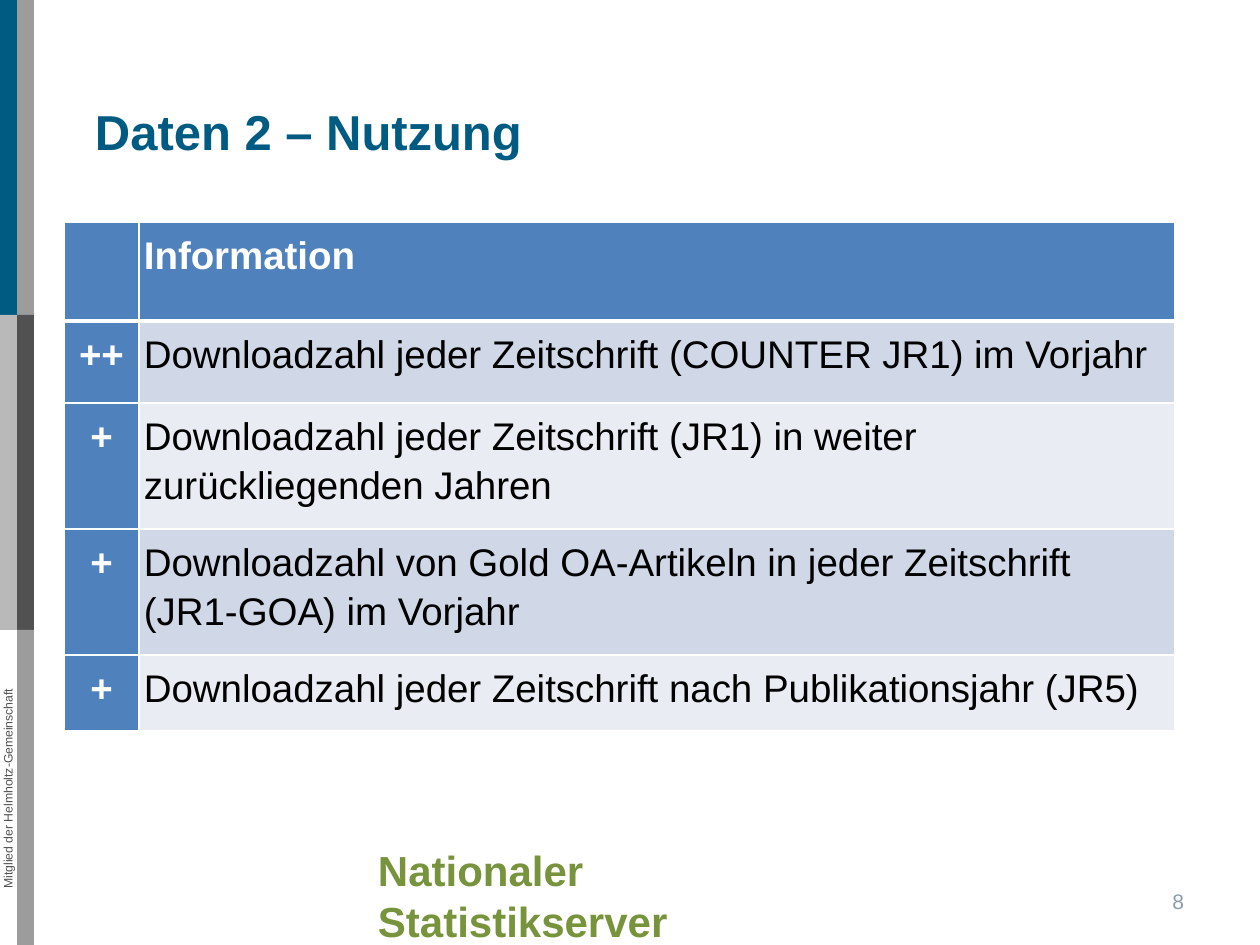
from dataclasses import dataclass

from lxml import etree
from pptx import Presentation
from pptx.dml.color import RGBColor
from pptx.enum.shapes import MSO_SHAPE
from pptx.enum.text import MSO_ANCHOR, PP_ALIGN
from pptx.oxml.ns import qn
from pptx.util import Inches, Pt

LEFT, CENTER, RIGHT = PP_ALIGN.LEFT, PP_ALIGN.CENTER, PP_ALIGN.RIGHT
TOP, MIDDLE = MSO_ANCHOR.TOP, MSO_ANCHOR.MIDDLE
RECT = MSO_SHAPE.RECTANGLE
PX_PER_INCH = 126


@dataclass(frozen=True)
class Theme:
    font: str = "Arial"
    blue: str = "005B82"
    light_gray: str = "B9B9B9"
    mid_gray: str = "9C9C9C"
    dark_gray: str = "515151"
    page_gray: str = "8B9BAC"
    green: str = "77933C"
    header: str = "4F81BD"
    bands: tuple = ("D0D8E7", "E9ECF3")
    white: str = "FFFFFF"
    black: str = "000000"
    title_size: int = 28
    closing_size: int = 24
    table_size: int = 22
    page_size: int = 12
    side_size: int = 7
    thin: float = 0.96
    thick: float = 3


THEME = Theme()

BAR_WIDTH, BAR_HEIGHT = 17, 315
BARS = [
    (0, 0, THEME.blue),
    (1, 0, THEME.mid_gray),
    (0, 1, THEME.light_gray),
    (1, 1, THEME.dark_gray),
    (1, 2, THEME.mid_gray),
]
TABLE_COLS = [75, 1036]
TABLE_ROWS = [
    (99, "", "Information"),
    (82, "++", "Downloadzahl jeder Zeitschrift (COUNTER JR1) im Vorjahr"),
    (126, "+", "Downloadzahl jeder Zeitschrift (JR1) in weiter zurückliegenden Jahren"),
    (126, "+", "Downloadzahl von Gold OA-Artikeln in jeder Zeitschrift\n(JR1-GOA) im Vorjahr"),
    (76, "+", "Downloadzahl jeder Zeitschrift nach Publikationsjahr (JR5)"),
]


def px(n):
    return Inches(n / PX_PER_INCH)


def rgb(value):
    return RGBColor.from_string(value)


def write(tf, text, size, color, bold=False, align=LEFT, spacing=None):
    p = tf.paragraphs[0]
    p.alignment = align
    if spacing:
        p.line_spacing = spacing
    for i, line in enumerate(text.split("\n")):
        if i:
            p.add_line_break()
        r = p.add_run()
        r.text = line
        r.font.name = THEME.font
        r.font.size = Pt(size)
        r.font.bold = bold
        r.font.color.rgb = rgb(color)


def add_text(s, box, text, size, color, insets=(0, 0, 0, 0), anchor=TOP,
             wrap=True, rotation=0, **fmt):
    sp = s.shapes.add_textbox(*map(px, box))
    sp.rotation = rotation
    tf = sp.text_frame
    tf.word_wrap = wrap
    tf.vertical_anchor = anchor
    tf.margin_left, tf.margin_top, tf.margin_right, tf.margin_bottom = map(px, insets)
    write(tf, text, size, color, **fmt)


def add_bar(s, col, row, color):
    sp = s.shapes.add_shape(RECT, px(col * BAR_WIDTH), px(row * BAR_HEIGHT),
                            px(BAR_WIDTH), px(BAR_HEIGHT))
    sp.shadow.inherit = False
    sp.fill.solid()
    sp.fill.fore_color.rgb = rgb(color)
    sp.line.fill.background()


def set_borders(cell, top, bottom):
    tcPr = cell._tc.get_or_add_tcPr()
    sides = {"L": THEME.thin, "R": THEME.thin, "T": top, "B": bottom}
    for side, width in sides.items():
        ln = etree.SubElement(tcPr, qn(f"a:ln{side}"), w=str(Pt(width)))
        fill = etree.SubElement(ln, qn("a:solidFill"))
        etree.SubElement(fill, qn("a:srgbClr"), val=THEME.white)


def style_cell(cell, text, row, col):
    is_heading = row == 0 or col == 0
    set_borders(cell, THEME.thick if row == 1 else THEME.thin,
                THEME.thick if row == 0 else THEME.thin)
    cell.fill.solid()
    cell.fill.fore_color.rgb = rgb(THEME.header if is_heading else THEME.bands[(row - 1) % 2])
    cell.margin_left = cell.margin_right = px(5)
    cell.margin_top = cell.margin_bottom = px(6)
    if text:
        write(cell.text_frame, text, THEME.table_size,
              THEME.white if is_heading else THEME.black, bold=is_heading,
              align=LEFT if col else CENTER, spacing=1.15)


def add_usage_table(s, left, top):
    height = sum(row[0] for row in TABLE_ROWS)
    frame = s.shapes.add_table(len(TABLE_ROWS), len(TABLE_COLS), px(left), px(top),
                               px(sum(TABLE_COLS)), px(height))
    table = frame.table
    for column, width in zip(table.columns, TABLE_COLS):
        column.width = px(width)
    for i, (row_height, *texts) in enumerate(TABLE_ROWS):
        table.rows[i].height = px(row_height)
        for j, text in enumerate(texts):
            style_cell(table.cell(i, j), text, i, j)


def main():
    prs = Presentation()
    prs.slide_width, prs.slide_height = Inches(10), Inches(7.5)
    s = prs.slides.add_slide(prs.slide_layouts[6])
    for bar in BARS:
        add_bar(s, *bar)
    add_text(s, (-149, 781, 314, 15), "Mitglied der Helmholtz-Gemeinschaft",
             THEME.side_size, THEME.dark_gray, rotation=270, align=CENTER)
    add_text(s, (95, 96, 1116, 79), "Daten 2 – Nutzung", THEME.title_size,
             THEME.blue, insets=(0, 5, 0, 0), bold=True)
    add_text(s, (903, 876, 294, 50), "8", THEME.page_size, THEME.page_gray,
             insets=(13, 6, 13, 6), anchor=MIDDLE, align=RIGHT)
    add_usage_table(s, 64, 222)
    add_text(s, (365, 839, 532, 63), "Nationaler Statistikserver", THEME.closing_size,
             THEME.green, insets=(13, 6, 13, 6), wrap=False, bold=True)
    prs.save("out.pptx")


if __name__ == "__main__":
    main()
